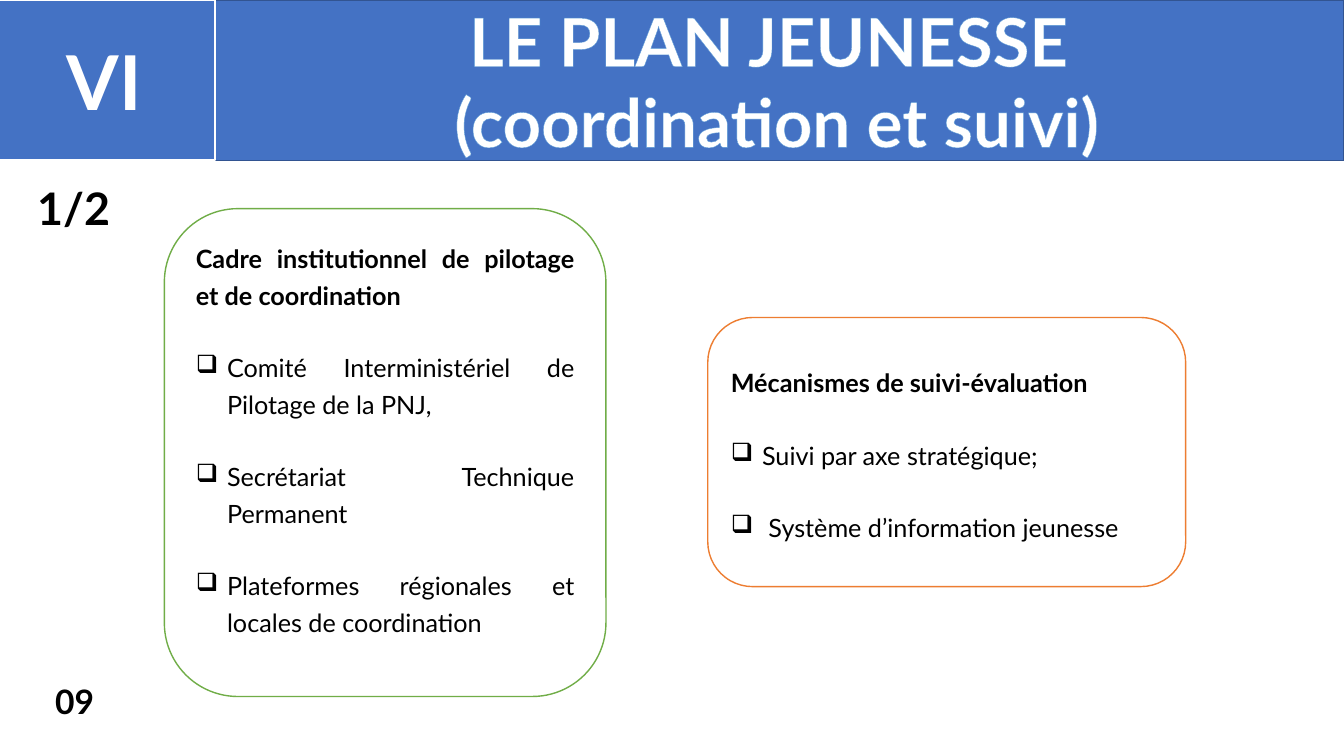
"""Build the slide on coordination and monitoring of the youth plan."""
from pptx import Presentation
from pptx.dml.color import RGBColor
from pptx.enum.shapes import MSO_SHAPE as Preset
from pptx.enum.text import MSO_ANCHOR as Anchor, PP_ALIGN as Align
from pptx.oxml import parse_xml
from pptx.oxml.ns import nsdecls
from pptx.util import Inches, Pt

WHITE = RGBColor(0xFF, 0xFF, 0xFF)
BLACK = RGBColor(0, 0, 0)
BLUE = RGBColor(0x44, 0x72, 0xC4)
NAVY = RGBColor(0x32, 0x54, 0x91)
GREEN = RGBColor(0x70, 0xAD, 0x47)
ORANGE = RGBColor(0xED, 0x7D, 0x31)
FONT = "Lato"

BANNERS = [
    (("LE PLAN JEUNESSE ", "(coordination et suivi)"), (2.08, 0, 11.25, 1.59), NAVY, 1, 48, True),
    (("VI",), (-0.06, 0, 2.19, 1.59), WHITE, 1.5, 54, False),
]
LABELS = [
    ("09", (0.35, 6.51, 0.78, 0.62), 24, 1.5),
    ("1/2", (0.17, 1.74, 1.12, 0.64), 32, 1.0),
]
CARDS = [
    (
        "Cadre institutionnel de pilotage et de coordination",
        [
            "Comité Interministériel de Pilotage de la PNJ, ",
            "Secrétariat Technique Permanent",
            "Plateformes régionales et locales de coordination",
        ],
        (1.63, 2.07, 4.38, 4.84), GREEN, 0.35,
    ),
    (
        "Mécanismes de suivi-évaluation",
        ["Suivi par axe stratégique;", " Système d’information jeunesse"],
        (7.02, 3.15, 4.74, 2.67), ORANGE, 0.05,
    ),
]
CARD_SIZE, CARD_SPACING, ITEM_GAP = 18, 1.2, 26
HANGING = Inches(0.31)


def add_panel(page, preset, place, fill, line, width):
    panel = page.shapes.add_shape(preset, *map(Inches, place))
    panel.shadow.inherit = False
    panel.fill.solid()
    panel.fill.fore_color.rgb = fill
    panel.line.color.rgb = line
    panel.line.width = Pt(width)
    panel.text_frame.word_wrap = True
    panel.text_frame.vertical_anchor = Anchor.MIDDLE
    return panel


def write(frame, lines, size, color, align, bold=True, spacing=1.0):
    frame.text = "\n".join(lines)
    for para in frame.paragraphs:
        para.alignment = align
        para.line_spacing = spacing
        for span in para.runs:
            span.font.name = FONT
            span.font.size = Pt(size)
            span.font.bold = bold
            span.font.color.rgb = color


def outline_text(frame):
    for para in frame.paragraphs:
        for span in para.runs:
            span.font._element.insert(0, parse_xml(
                f'<a:ln {nsdecls("a")} w="{Pt(0.8)}"><a:solidFill>'
                '<a:srgbClr val="5B9BD5"/></a:solidFill></a:ln>'))


def add_bullet(para):
    settings = para._p.get_or_add_pPr()
    settings.set("marL", str(HANGING))
    settings.set("indent", str(-HANGING))
    settings.append(parse_xml(f'<a:buChar {nsdecls("a")} char="❑"/>'))


def main():
    deck = Presentation()
    deck.slide_width, deck.slide_height = Inches(13.33), Inches(7.5)
    page = deck.slides.add_slide(deck.slide_layouts[6])

    for lines, place, line, width, size, outlined in BANNERS:
        banner = add_panel(page, Preset.RECTANGLE, place, BLUE, line, width)
        write(banner.text_frame, lines, size, WHITE, Align.CENTER)
        if outlined:
            outline_text(banner.text_frame)

    for text, place, size, spacing in LABELS:
        box = page.shapes.add_textbox(*map(Inches, place))
        box.text_frame.word_wrap = True
        write(box.text_frame, [text], size, BLACK, Align.CENTER, spacing=spacing)

    for heading, items, place, line, bottom in CARDS:
        card = add_panel(page, Preset.ROUNDED_RECTANGLE, place, WHITE, line, 1)
        frame = card.text_frame
        frame.margin_bottom = Inches(bottom)
        write(frame, [heading, *items], CARD_SIZE, BLACK, Align.JUSTIFY, spacing=CARD_SPACING)
        for para in frame.paragraphs[1:]:
            para.space_before = Pt(ITEM_GAP)
            add_bullet(para)
            for span in para.runs:
                span.font.bold = False

    deck.save("out.pptx")


if __name__ == "__main__":
    main()
